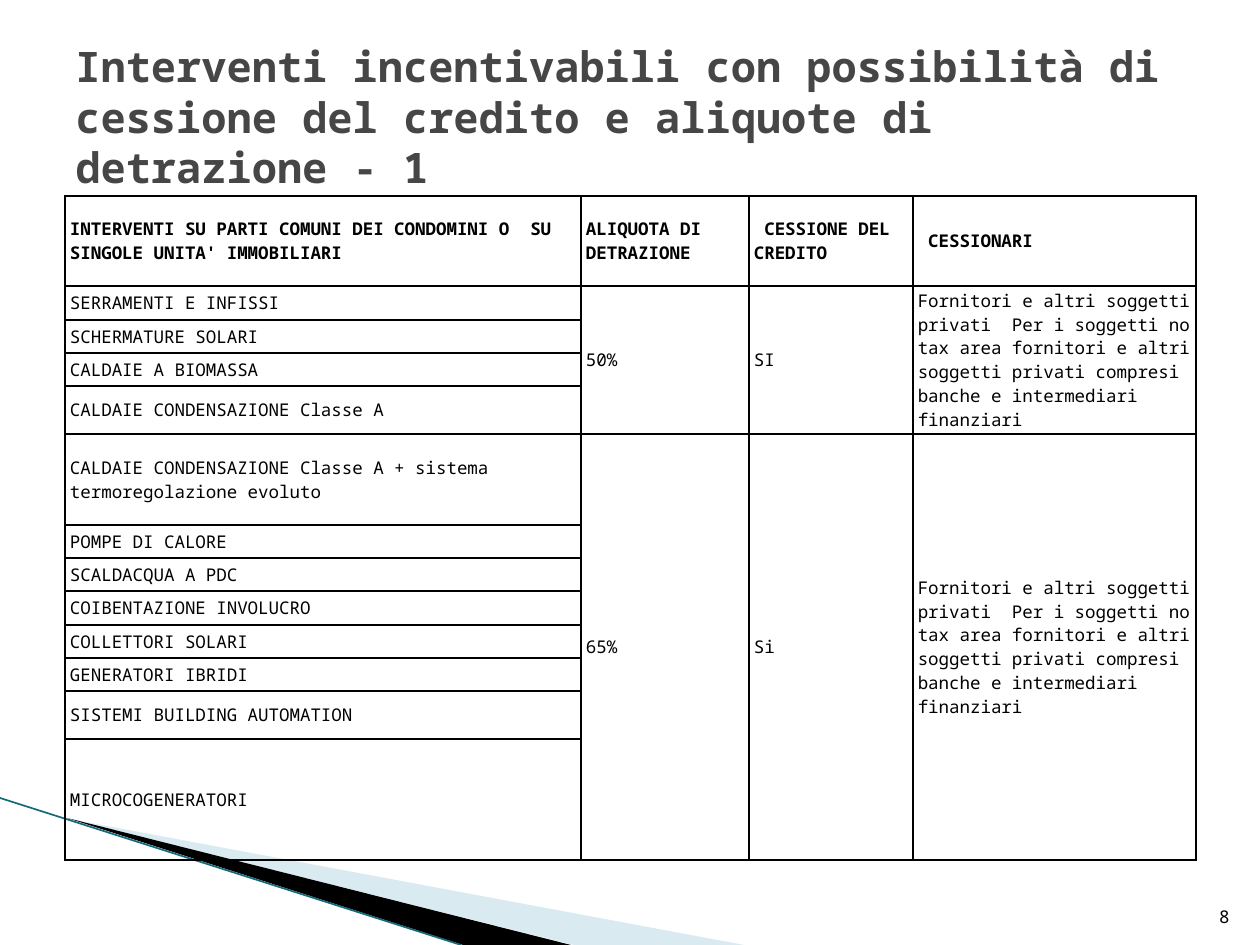
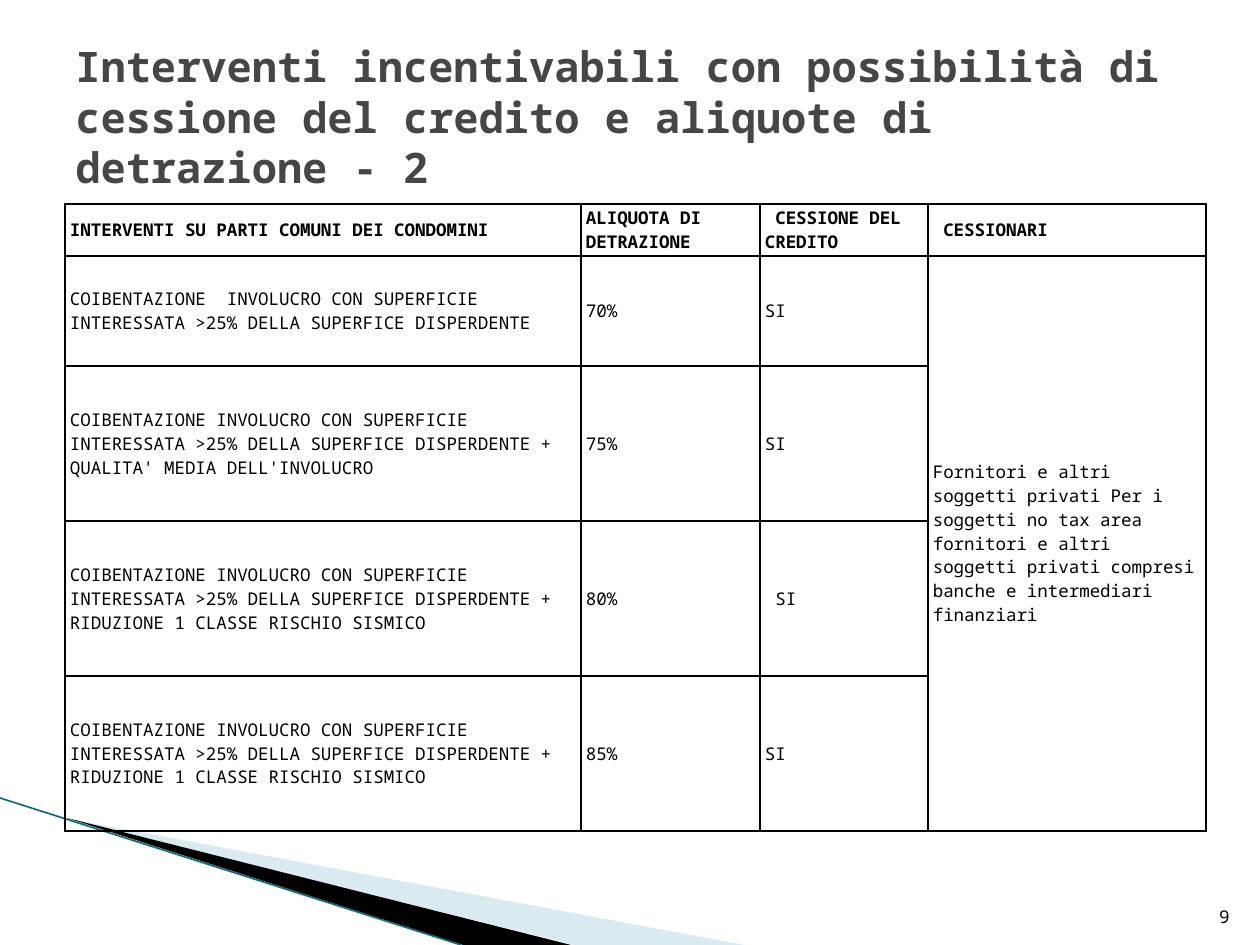
from dataclasses import dataclass

from lxml.etree import SubElement
from pptx import Presentation
from pptx.dml.color import RGBColor as RGB
from pptx.enum.text import MSO_ANCHOR as Anchor, PP_ALIGN as Align
from pptx.oxml.ns import qn
from pptx.util import Pt

PX = 914400 // 126


@dataclass(frozen=True)
class Theme:
    font: str = "Noto Sans Mono"
    title: str = "464646"
    ink: str = "000000"
    pale: str = "A0CBDC"
    line: str = "14697D"
    title_size: int = 24
    body_size: int = 10
    border: float = 1
    ray: float = 0.95


T = Theme()

TITLE = ("Interventi incentivabili con possibilità di cessione del credito "
         "e aliquote di detrazione - {}")
HEADS = ["ALIQUOTA DI DETRAZIONE", " CESSIONE DEL CREDITO", " CESSIONARI"]
BUYERS = ("Fornitori e altri soggetti privati{}Per i soggetti no tax area fornitori "
          "e altri soggetti privati compresi banche e intermediari finanziari")
AREA = "INVOLUCRO CON SUPERFICIE INTERESSATA >25% DELLA SUPERFICE DISPERDENTE"
SEISMIC = f"COIBENTAZIONE {AREA} + RIDUZIONE 1 CLASSE RISCHIO SISMICO"


def group(works, *shared):
    """Rows whose last columns are shared; None continues the cell above."""
    return [[work, *(shared if i == 0 else [None] * len(shared))]
            for i, work in enumerate(works)]


SLIDES = [
    dict(
        number=8, box=(65, 196), cols=[516, 168, 164, 283],
        rows=[90, 34, 33, 33, 48, 91, 33, 33, 34, 33, 33, 48, 121],
        cells=[
            ["INTERVENTI SU PARTI COMUNI DEI CONDOMINI O  SU "
             "SINGOLE UNITA' IMMOBILIARI", *HEADS],
            *group(["SERRAMENTI E INFISSI", "SCHERMATURE SOLARI",
                    "CALDAIE A BIOMASSA", "CALDAIE CONDENSAZIONE Classe A"],
                   "50%", "SI", BUYERS.format("  ")),
            *group(["CALDAIE CONDENSAZIONE Classe A + sistema termoregolazione evoluto",
                    "POMPE DI CALORE", "SCALDACQUA A PDC", "COIBENTAZIONE INVOLUCRO",
                    "COLLETTORI SOLARI", "GENERATORI IBRIDI",
                    "SISTEMI BUILDING AUTOMATION", "MICROCOGENERATORI"],
                   "65%", "Si", BUYERS.format("  ")),
        ]),
    dict(
        number=9, box=(65, 204), cols=[516, 179, 168, 278],
        rows=[52, 110, 155, 155, 155],
        cells=[
            ["INTERVENTI SU PARTI COMUNI DEI CONDOMINI", *HEADS],
            [f"COIBENTAZIONE  {AREA}", "70%", "SI", BUYERS.format(" ")],
            [f"COIBENTAZIONE {AREA} + QUALITA' MEDIA DELL'INVOLUCRO", "75%", "SI", None],
            [SEISMIC, "80%", " SI", None],
            [SEISMIC, "85%", "SI", None],
        ]),
]


def px(*values):
    return [v * PX for v in values]


def write(tf, text, size=T.body_size, color=T.ink, bold=False, align=Align.LEFT):
    p = tf.paragraphs[0]
    p.alignment = align
    r = p.add_run()
    r.text = text
    for name, value in dict(name=T.font, size=Pt(size), bold=bold).items():
        setattr(r.font, name, value)
    r.font.color.rgb = RGB.from_string(color)


def add_text(s, box, text, anchor, **style):
    tf = s.shapes.add_textbox(*px(*box)).text_frame
    tf.word_wrap = True
    tf.vertical_anchor = anchor
    write(tf, text, **style)


def add_wedge(s, points, color, alpha=None):
    start, *rest = points
    builder = s.shapes.build_freeform(*start, scale=PX)
    builder.add_line_segments(rest, close=True)
    sp = builder.convert_to_shape()
    sp.shadow.inherit = False
    sp.line.fill.background()
    sp.fill.solid()
    sp.fill.fore_color.rgb = RGB.from_string(color)
    if alpha:
        clr = sp.fill._xPr.find(".//" + qn("a:srgbClr"))
        SubElement(clr, qn("a:alpha"), val=str(alpha * 1000))


def add_corner(s, left, top, bottom):
    """Fanned wedges and a ray that run from the left edge to the bottom."""
    x, y = left + 67, top + 20
    add_wedge(s, [(x + 2, y + 1), (left + 744, bottom), (left + 574, bottom)], T.pale, 40)
    add_wedge(s, [(x, y), (left + 571, bottom), (left + 463, bottom)], T.ink)
    ray = s.shapes.add_connector(1, *px(left, top, left + 461, bottom))
    ray.line.color.rgb = RGB.from_string(T.line)
    ray.line.width = Pt(T.ray)
    SubElement(ray._element.spPr, qn("a:effectLst"))


def add_borders(cell):
    tc_pr = cell._tc.get_or_add_tcPr()
    for i, side in enumerate(("lnL", "lnR", "lnT", "lnB")):
        ln = tc_pr.makeelement(qn(f"a:{side}"), {"w": str(Pt(T.border))})
        SubElement(SubElement(ln, qn("a:solidFill")), qn("a:srgbClr"), val=T.ink)
        tc_pr.insert(i, ln)


def add_grid(s, box, cols, rows, cells):
    frame = s.shapes.add_table(len(rows), len(cols), *px(*box, sum(cols), sum(rows)))
    table = frame.table
    table.first_row = table.horz_banding = False
    for col, width in zip(table.columns, cols):
        col.width = width * PX
    for row, height in zip(table.rows, rows):
        row.height = height * PX
    layout = dict(margin_left=5 * PX, margin_right=5 * PX, margin_top=2 * PX,
                  margin_bottom=2 * PX, vertical_anchor=Anchor.MIDDLE)
    for i, texts in enumerate(cells):
        for j, text in enumerate(texts):
            cell = table.cell(i, j)
            for name, value in layout.items():
                setattr(cell, name, value)
            cell.fill.background()
            add_borders(cell)
            if text is None:
                continue
            write(cell.text_frame, text, bold=i == 0)
            last = i
            while last + 1 < len(cells) and cells[last + 1][j] is None:
                last += 1
            if last > i:
                cell.merge(table.cell(last, j))


def add_table_slide(prs, part, number, box, cols, rows, cells):
    s = prs.slides.add_slide(prs.slide_layouts[6])
    add_corner(s, 0, 798, 945)
    add_grid(s, box, cols, rows, cells)
    add_text(s, (1192, 883, 50, 50), str(number), Anchor.BOTTOM, align=Align.RIGHT)
    add_text(s, (63, 38, 1134, 157), TITLE.format(part), Anchor.MIDDLE,
             size=T.title_size, color=T.title, bold=True)


def main():
    prs = Presentation()
    prs.slide_width, prs.slide_height = px(1260, 945)
    for part, content in enumerate(SLIDES, 1):
        add_table_slide(prs, part, **content)
    prs.save("out.pptx")


if __name__ == "__main__":
    main()
